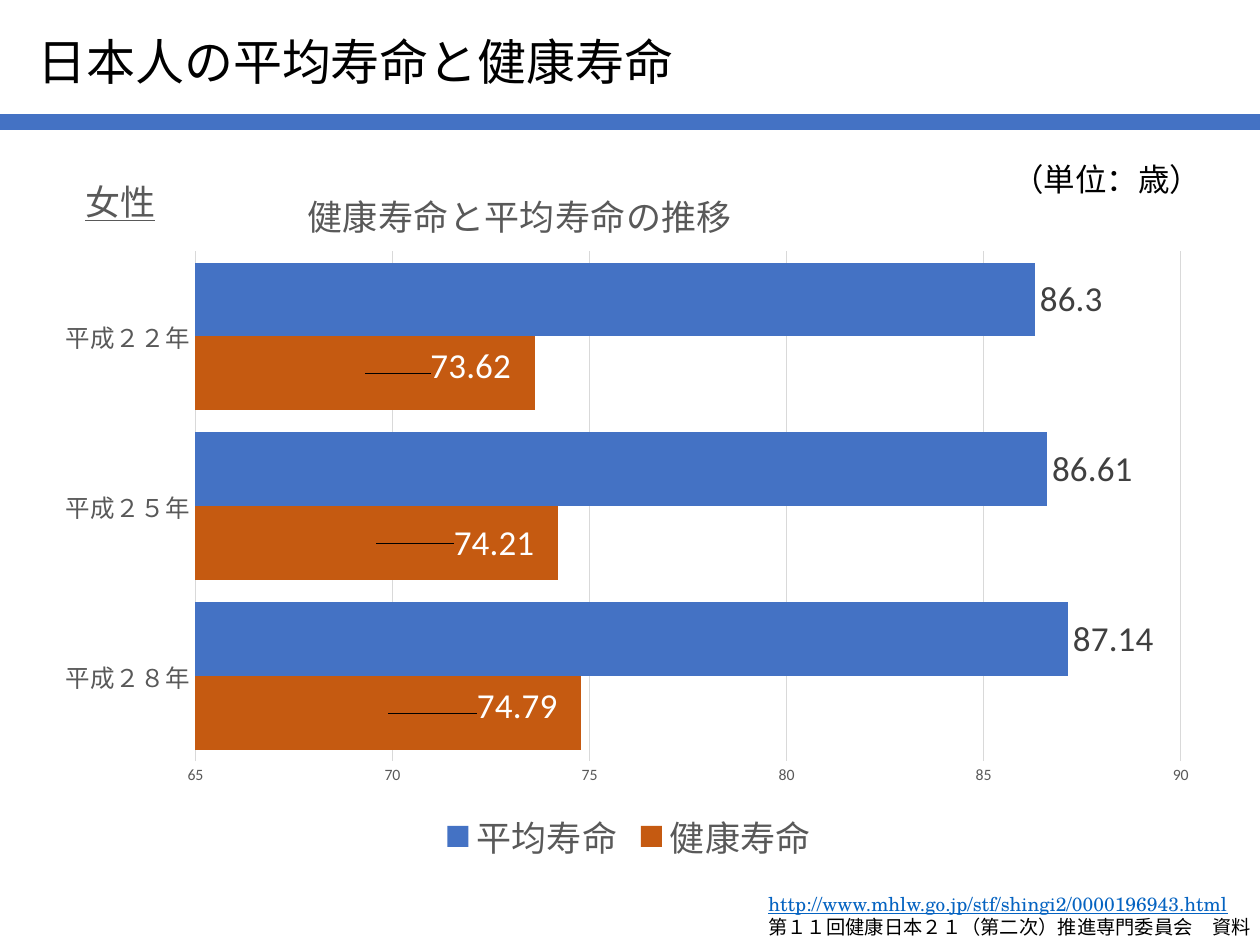
from lxml import etree
from pptx import Presentation
from pptx.chart.data import CategoryChartData
from pptx.dml.color import RGBColor
from pptx.enum.chart import XL_CHART_TYPE, XL_LABEL_POSITION, XL_LEGEND_POSITION, XL_TICK_MARK
from pptx.enum.shapes import MSO_CONNECTOR
from pptx.enum.text import MSO_AUTO_SIZE, PP_ALIGN
from pptx.oxml.ns import qn
from pptx.util import Emu, Pt

BLUE, ORANGE, GRAY, GRID = "4472C4", "C55A11", "595959", "D9D9D9"


def color(value):
    return RGBColor.from_string(value)


def px(value):
    return Emu(round(value * 914400 / 126))


def apply_format(target, values):
    for name, value in values.items():
        setattr(target, name, value)


def manual_layout(parent, position, **values):
    for existing in parent.findall(qn("c:layout")):
        parent.remove(existing)
    layout = etree.Element(qn("c:layout"))
    parent.insert(position, layout)
    manual = etree.SubElement(layout, qn("c:manualLayout"))
    for name, value in values.items():
        etree.SubElement(manual, qn("c:" + name)).set("val", str(value))


class SlideBuilder:
    font_name = "Calibri"

    def __init__(self, presentation):
        self.slide = presentation.slides.add_slide(presentation.slide_layouts[6])

    def style_font(self, font, size, fill="000000", **extra):
        apply_format(font, {"size": Pt(size), "name": self.font_name, "bold": False, **extra})
        font.color.rgb = color(fill)

    def rule(self, y, width, fill):
        connector = self.slide.shapes.add_connector(
            MSO_CONNECTOR.STRAIGHT, 0, px(y), px(1260), px(y))
        connector.line.width = Pt(width)
        connector.line.color.rgb = color(fill)
        etree.SubElement(connector._element.spPr, qn("a:effectLst"))

    def text(self, box, lines, alignment=PP_ALIGN.LEFT):
        shape = self.slide.shapes.add_textbox(*map(px, box))
        frame = shape.text_frame
        apply_format(frame, {"word_wrap": True, "auto_size": MSO_AUTO_SIZE.SHAPE_TO_FIT_TEXT})
        for index, (content, style) in enumerate(lines):
            paragraph = frame.add_paragraph() if index else frame.paragraphs[0]
            paragraph.alignment = alignment
            run = paragraph.add_run()
            run.text = content
            self.style_font(run.font, **style)

    def bar_chart(self, box, categories, series_values):
        data = CategoryChartData()
        data.categories = categories
        for name, values in series_values.items():
            data.add_series(name, values)
        chart = self.slide.shapes.add_chart(
            XL_CHART_TYPE.BAR_CLUSTERED, *map(px, box), data).chart
        self.style_font(chart.font, 10)
        apply_format(chart.plots[0], {"gap_width": 30, "overlap": 0, "vary_by_categories": False})
        plot_area = chart._chartSpace.chart.plotArea
        manual_layout(plot_area, 0, layoutTarget="inner", xMode="edge", yMode="edge",
                      x=0.13, y=0.14, w=0.84, h=0.71)
        return chart

    def chart_title(self, chart, content, x, y):
        title = chart.chart_title
        title.include_text_in_layout = False
        paragraph = title.text_frame.paragraphs[0]
        run = paragraph.add_run()
        run.text = content
        self.style_font(run.font, 20, GRAY)
        manual_layout(title._element, 1, xMode="edge", yMode="edge", x=x, y=y)

    def chart_axes(self, chart, minimum, maximum, step):
        ticks = {"major_tick_mark": XL_TICK_MARK.NONE, "minor_tick_mark": XL_TICK_MARK.NONE}
        for axis, size in ((chart.category_axis, 14), (chart.value_axis, 9)):
            apply_format(axis, ticks)
            self.style_font(axis.tick_labels.font, size, GRAY)
        apply_format(chart.value_axis, {
            "minimum_scale": minimum, "maximum_scale": maximum,
            "major_unit": step, "has_major_gridlines": True})
        chart.value_axis.format.line.fill.background()
        for line in (chart.category_axis.format.line, chart.value_axis.major_gridlines.format.line):
            line.width = Pt(0.75)
            line.color.rgb = color(GRID)

    def chart_legend(self, chart):
        chart.has_legend = True
        apply_format(chart.legend, {
            "position": XL_LEGEND_POSITION.BOTTOM, "include_in_layout": False})
        self.style_font(chart.legend.font, 20, GRAY)

    def chart_series(self, series, fill, label_fill, position, offsets=()):
        series.format.fill.solid()
        series.format.fill.fore_color.rgb = color(fill)
        labels = series.data_labels
        apply_format(labels, {"show_value": True, "position": position})
        self.style_font(labels.font, 20, label_fill)
        for index, (x, y) in enumerate(offsets):
            label = series.points[index].data_label
            self.style_font(label.font, 20, label_fill)
            label.position = position
        for element, (x, y) in zip(series._element.iter(qn("c:dLbl")), offsets):
            manual_layout(element, 1, x=x, y=y)


def main():
    presentation = Presentation()
    apply_format(presentation, {"slide_width": px(1260), "slide_height": px(945)})
    builder = SlideBuilder(presentation)

    builder.rule(122, 9, BLUE)
    builder.text((1000, 154, 218, 50), [("（単位：歳）", {"size": 18})])
    source = {"size": 11, "name": "TeX Gyre Schola"}
    builder.text((756, 886, 522, 59), [
        ("http://www.mhlw.go.jp/stf/shingi2/0000196943.html",
         {**source, "fill": "0563C1", "underline": True}),
        ("第１１回健康日本２１（第二次）推進専門委員会　資料", source),
    ], PP_ALIGN.JUSTIFY)
    builder.text((25, 25, 673, 72), [("日本人の平均寿命と健康寿命", {"size": 28})])

    chart = builder.bar_chart(
        (43, 151, 1173, 718),
        ["平成２８年", "平成２５年", "平成２２年"],
        {"健康寿命": (74.79, 74.21, 73.62), "平均寿命": (87.14, 86.61, 86.3)})
    builder.chart_title(chart, "健康寿命と平均寿命の推移", 0.22, 0.04)
    builder.chart_axes(chart, 65, 90, 5)
    builder.chart_legend(chart)
    healthy, average = chart.plots[0].series
    builder.chart_series(healthy, ORANGE, "FFFFFF", XL_LABEL_POSITION.CENTER,
                         [(0.11, -0.01), (0.1, 0), (0.09, -0.01)])
    builder.chart_series(average, BLUE, "404040", XL_LABEL_POSITION.OUTSIDE_END)
    builder.text((73, 174, 110, 63), [("女性", {"size": 20, "fill": GRAY, "underline": True})])

    presentation.save("out.pptx")


if __name__ == "__main__":
    main()
